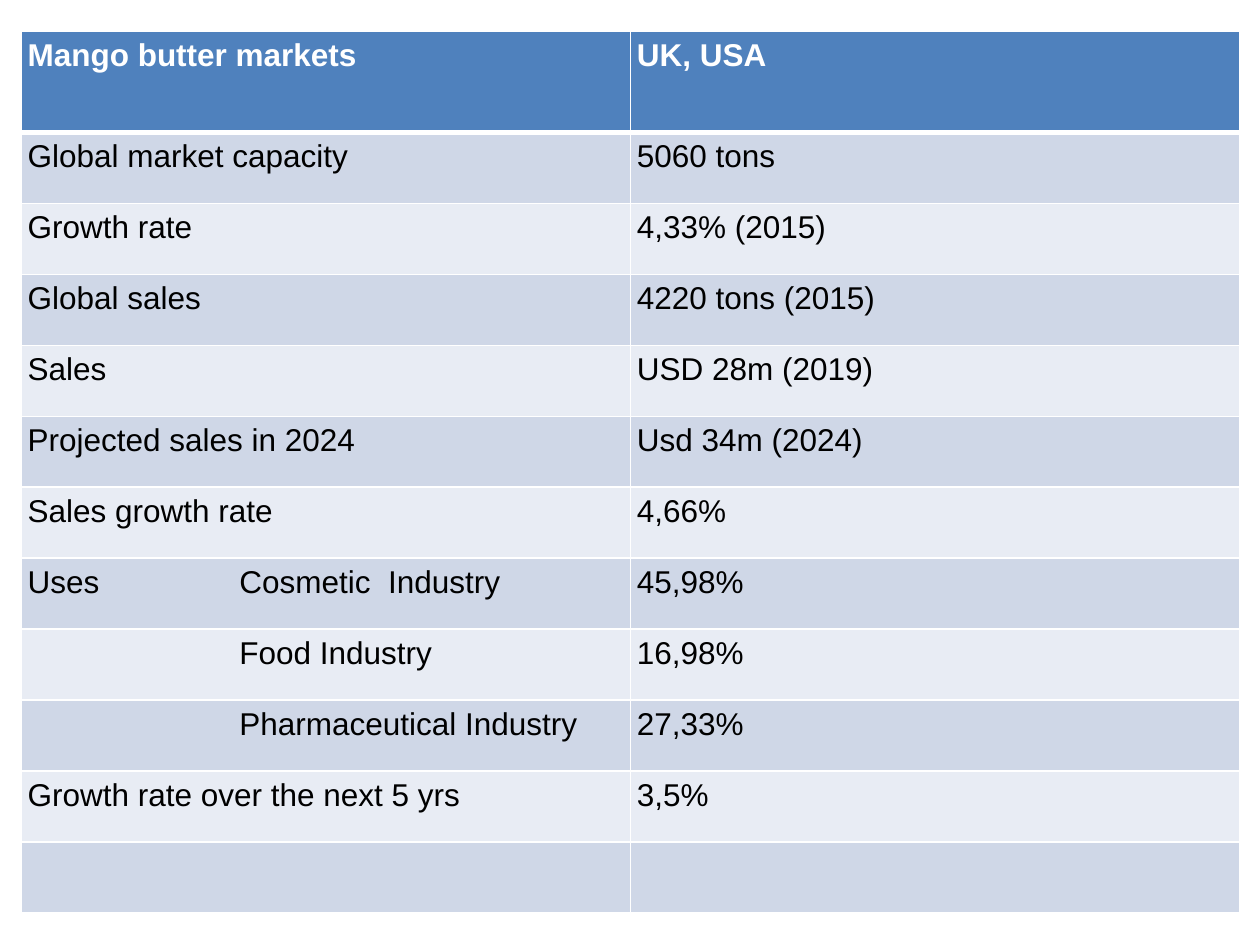
from lxml.etree import SubElement
from pptx import Presentation
from pptx.dml.color import RGBColor
from pptx.oxml.ns import qn
from pptx.util import Inches, Pt

MARKETS = [
    ("Mango butter markets", "UK, USA"),
    ("Global market capacity", "5060 tons"),
    ("Growth rate", "4,33% (2015)"),
    ("Global sales", "4220 tons (2015)"),
    ("Sales", "USD 28m (2019)"),
    ("Projected sales in 2024", "Usd 34m (2024)"),
    ("Sales growth rate", "4,66%"),
    ("Uses\tCosmetic  Industry", "45,98%"),
    ("Food Industry", "16,98%"),
    ("Pharmaceutical Industry", "27,33%"),
    ("Growth rate over the next 5 yrs", "3,5%"),
    ("", ""),
]
INDENTED = {"Food Industry", "Pharmaceutical Industry"}
USE_INDENT = Inches(1.68)
TABLE_WIDTH, TABLE_HEIGHT, HEADER_HEIGHT = 9.67, 7, 0.8

HEADER_FILL, BANDS = "4F81BD", ("E8ECF4", "CFD7E7")
MARGINS = dict.fromkeys(
    ("margin_left", "margin_top", "margin_right", "margin_bottom"), Inches(0.05))
BODY_FONT = {"name": "Arial", "size": Pt(18), "bold": False}
HEADER_FONT = {**BODY_FONT, "bold": True}


def color(hex_code):
    return RGBColor.from_string(hex_code)


def set_attributes(target, values):
    for attribute, value in values.items():
        setattr(target, attribute, value)


def set_borders(cell, bottom_width):
    """Draw white rules; they must come before the fill in the cell properties."""
    properties = cell._tc.get_or_add_tcPr()
    widths = {"a:lnL": 1, "a:lnR": 1, "a:lnT": 1, "a:lnB": bottom_width}
    for position, (side, width) in enumerate(widths.items()):
        border = SubElement(properties, qn(side), w=str(Pt(width)))
        fill = SubElement(border, qn("a:solidFill"))
        SubElement(fill, qn("a:srgbClr"), val="FFFFFF")
        properties.insert(position, border)


def align_use(paragraph, text):
    """Line up the names of the industries below one another."""
    properties = paragraph._p.get_or_add_pPr()
    if "\t" in text:
        stops = SubElement(properties, qn("a:tabLst"))
        SubElement(stops, qn("a:tab"), pos=str(USE_INDENT), algn="l")
    elif text in INDENTED:
        properties.set("marL", str(USE_INDENT))


def fill_cell(cell, text, is_header, fill):
    set_attributes(cell, MARGINS)
    cell.fill.solid()
    cell.fill.fore_color.rgb = color(fill)
    # The header's thick rule is shared with the row below it.
    set_borders(cell, 3 if is_header else 1)
    if not text:
        return
    paragraph = cell.text_frame.paragraphs[0]
    run = paragraph.add_run()
    run.text = text
    set_attributes(run.font, HEADER_FONT if is_header else BODY_FONT)
    run.font.color.rgb = color("FFFFFF" if is_header else "000000")
    align_use(paragraph, text)


def add_market_table(slide):
    table = slide.shapes.add_table(
        len(MARKETS), 2, Inches(0.17), Inches(0.25),
        Inches(TABLE_WIDTH), Inches(TABLE_HEIGHT)).table
    body_height = (TABLE_HEIGHT - HEADER_HEIGHT) / (len(MARKETS) - 1)
    for row, texts in enumerate(MARKETS):
        is_header = row == 0
        table.rows[row].height = Inches(HEADER_HEIGHT if is_header else body_height)
        fill = HEADER_FILL if is_header else BANDS[row % 2]
        for column, text in enumerate(texts):
            cell = table.cell(row, column)
            fill_cell(cell, text, is_header, fill)
            if row == 1:
                cell._tc.tcPr.find(qn("a:lnT")).set("w", str(Pt(3)))


def main():
    presentation = Presentation()
    set_attributes(presentation, {"slide_width": Inches(10), "slide_height": Inches(7.5)})
    add_market_table(presentation.slides.add_slide(presentation.slide_layouts[6]))
    presentation.save("out.pptx")


if __name__ == "__main__":
    main()
